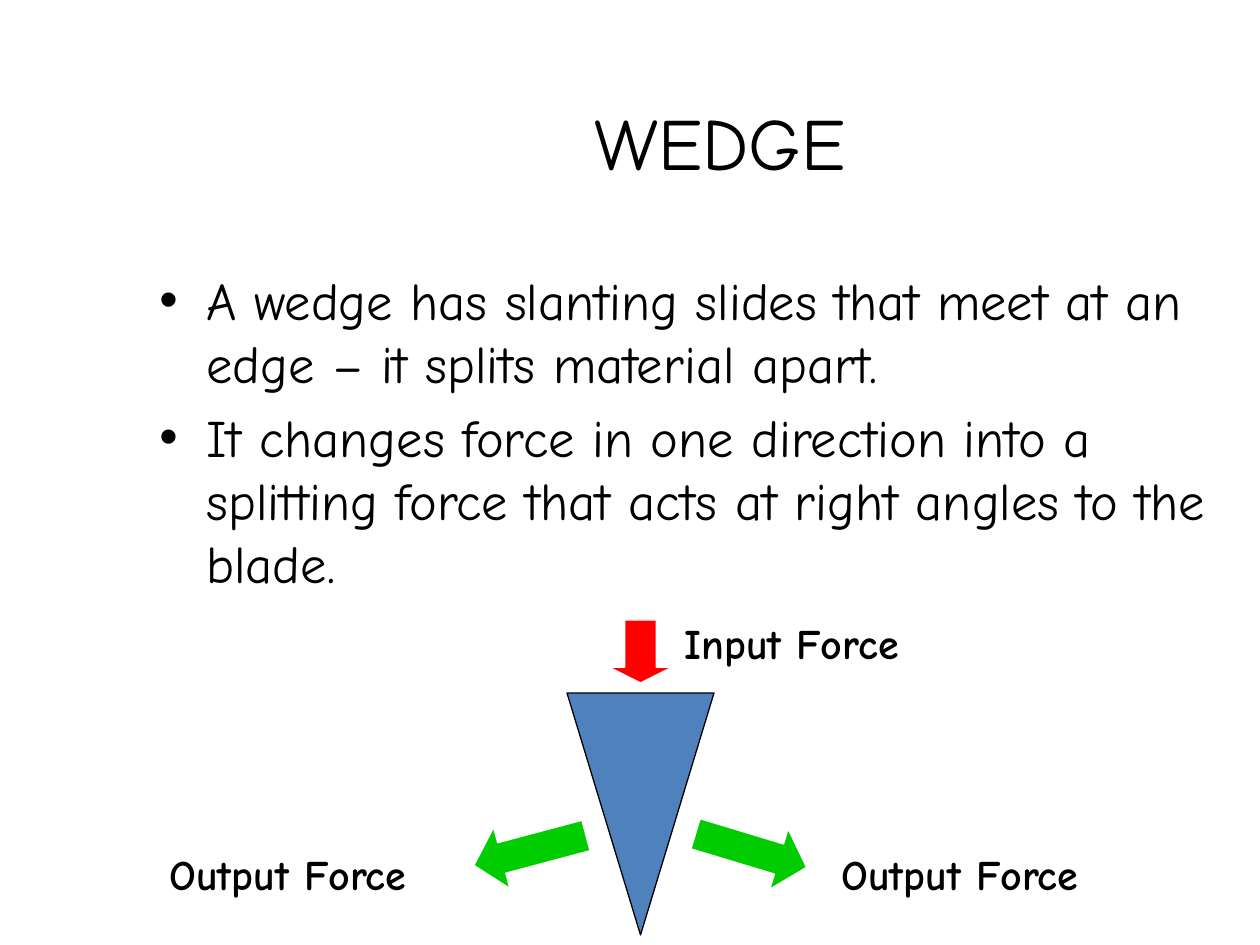
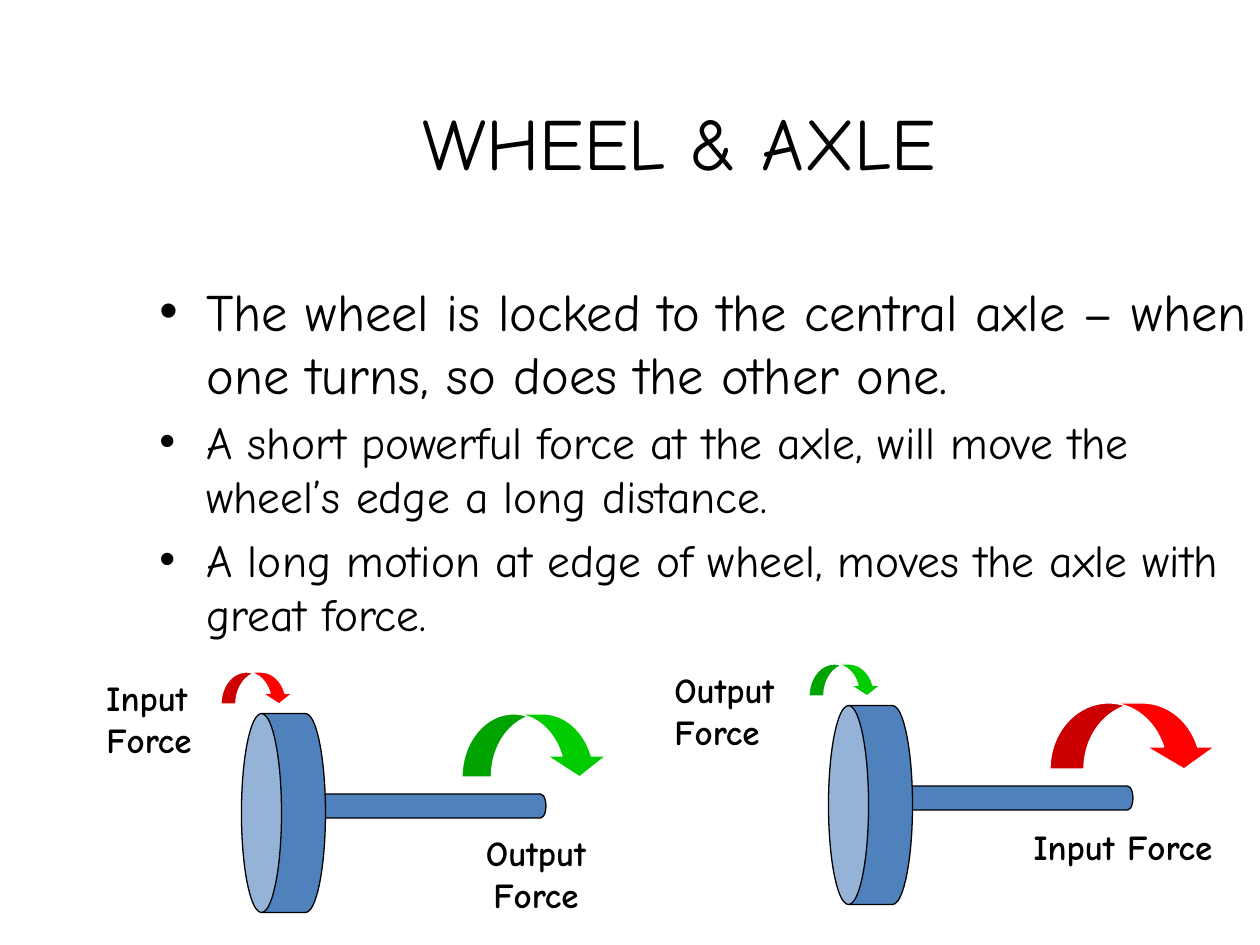
from lxml.etree import SubElement
from pptx import Presentation
from pptx.dml.color import RGBColor
from pptx.enum.shapes import MSO_SHAPE as SHAPE
from pptx.enum.text import MSO_ANCHOR as ANCHOR, PP_ALIGN as ALIGN
from pptx.oxml.ns import qn
from pptx.util import Emu, Pt

PX = 914400 / 126
SLIDE_W, SLIDE_H = 1260, 945
FONT = "Comic Neue"
BLACK = RGBColor(0x00, 0x00, 0x00)
WHITE = RGBColor(0xFF, 0xFF, 0xFF)
BLUE = RGBColor(0x4F, 0x81, 0xBD)
RED = RGBColor(0xFF, 0x00, 0x00)
GREEN = RGBColor(0x00, 0xCC, 0x00)
TITLE_SIZE = 42
BULLET_INDENT = 47

# Boxes are (left, top, width, height) in px; bullets are (text, size).
WEDGE = {
    "title": (" WEDGE", (136, 42, 1144, 198)),
    "body": (147, 262, 1081, 640),
    "bullets": [
        ("A wedge has slanting slides that meet at an edge – it splits material apart.", 30),
        ("It changes force in one direction into a splitting force that acts "
         "at right angles to the blade.", 30),
    ],
}
WHEEL = {
    "title": (" WHEEL & AXLE", (147, 42, 1040, 198)),
    "body": (147, 273, 1113, 567),
    "bullets": [
        ("The wheel is locked to the central axle – when one turns, so does the other one.", 30),
        ("A short powerful force at the axle, will move the wheel’s edge a long distance.", 26),
        ("A long motion at edge of wheel, moves the axle with great force.", 26),
    ],
}

# (text, box, size, alignment)
WEDGE_LABELS = [
    ("Input Force", (672, 611, 266, 63), 24, ALIGN.LEFT),
    ("Output Force", (157, 842, 296, 63), 24, ALIGN.LEFT),
    ("Output Force", (829, 842, 296, 63), 24, ALIGN.LEFT),
]
WHEEL_LABELS = [
    ("Input Force", (94, 670, 136, 97), 20, ALIGN.LEFT),
    ("Output Force", (431, 825, 210, 97), 20, ALIGN.CENTER),
    ("Output Force", (662, 662, 179, 97), 20, ALIGN.LEFT),
    ("Input Force", (1018, 819, 210, 97), 20, ALIGN.CENTER),
]

WEDGE_BLADE = (567, 693, 147, 242)
INPUT_ARROW = (609, 620, 63, 63)
OUTPUT_ARROWS = [((472, 819, 116, 63), 345.1), ((693, 819, 116, 63), 196.8)]

AXLE = (408, 680, 24, 252)
WHEEL_DISC = (184, 771, 199, 84)
MACHINE_OFFSETS = [(0, 0), (587, -8)]
# (box, colour, adjustments)
TURN_ARROWS = [
    ((221, 672, 73, 32), RED, (0.467, 0.933, 0.333)),
    ((462, 714, 147, 63), GREEN, (0.467, 0.933, 0.333)),
    ((809, 664, 73, 32), GREEN, (0.467, 0.933, 0.333)),
    ((1050, 703, 168, 66), RED, (0.515, 1.031, 0.333)),
]


def emu(box):
    return [Emu(round(v * PX)) for v in box]


def add_text(slide, box, lines, align=ALIGN.LEFT, anchor=ANCHOR.TOP, bold=False):
    """Add a text box with one paragraph for each (text, size) line."""
    tf = slide.shapes.add_textbox(*emu(box)).text_frame
    tf.word_wrap = True
    tf.vertical_anchor = anchor
    for i, (text, size) in enumerate(lines):
        p = tf.paragraphs[0] if i == 0 else tf.add_paragraph()
        p.text = text
        p.alignment = align
        font = p.runs[0].font
        font.name, font.size, font.bold = FONT, Pt(size), bold
        font.color.rgb = BLACK
    return tf


def add_bullets(slide, box, bullets):
    tf = add_text(slide, box, bullets)
    indent = round(BULLET_INDENT * PX)
    for i, (p, (_, size)) in enumerate(zip(tf.paragraphs, bullets)):
        p.space_before = Pt(round(size * 0.2) if i else 0)
        ppr = p._p.get_or_add_pPr()
        ppr.set("marL", str(indent))
        ppr.set("indent", str(-indent))
        SubElement(ppr, qn("a:buFont")).set("typeface", "Arial")
        SubElement(ppr, qn("a:buChar")).set("char", "•")


def add_figure(slide, kind, box, fill, line, adjustments, rotation=0):
    sp = slide.shapes.add_shape(kind, *emu(box))
    sp.shadow.inherit = False
    sp.fill.solid()
    sp.fill.fore_color.rgb = fill
    sp.line.color.rgb = line
    sp.line.width = Pt(0.75)
    sp.rotation = rotation
    for i, value in enumerate(adjustments):
        sp.adjustments[i] = value


def add_slide(prs, content, labels):
    slide = prs.slides.add_slide(prs.slide_layouts[6])
    title, box = content["title"]
    add_text(slide, box, [(title, TITLE_SIZE)], ALIGN.CENTER, ANCHOR.MIDDLE)
    add_bullets(slide, content["body"], content["bullets"])
    for text, box, size, align in labels:
        add_text(slide, box, [(text, size)], align, bold=True)
    return slide


def draw_wedge(slide):
    add_figure(slide, SHAPE.ISOSCELES_TRIANGLE, WEDGE_BLADE, BLUE, BLACK, [0.5], 180)
    add_figure(slide, SHAPE.DOWN_ARROW, INPUT_ARROW, RED, WHITE, (0.5, 0.25))
    for box, rotation in OUTPUT_ARROWS:
        add_figure(slide, SHAPE.LEFT_ARROW, box, GREEN, WHITE, (0.5, 0.458), rotation)


def draw_wheels(slide):
    for dx, dy in MACHINE_OFFSETS:
        for (x, y, w, h), depth in ((AXLE, 0.457), (WHEEL_DISC, 0.477)):
            add_figure(slide, SHAPE.CAN, (x + dx, y + dy, w, h), BLUE, BLACK, [depth], 270)
    for box, colour, adjustments in TURN_ARROWS:
        add_figure(slide, SHAPE.CURVED_DOWN_ARROW, box, colour, WHITE, adjustments)


def main():
    prs = Presentation()
    prs.slide_width, prs.slide_height = emu((SLIDE_W, SLIDE_H))
    draw_wedge(add_slide(prs, WEDGE, WEDGE_LABELS))
    draw_wheels(add_slide(prs, WHEEL, WHEEL_LABELS))
    prs.save("out.pptx")


if __name__ == "__main__":
    main()
